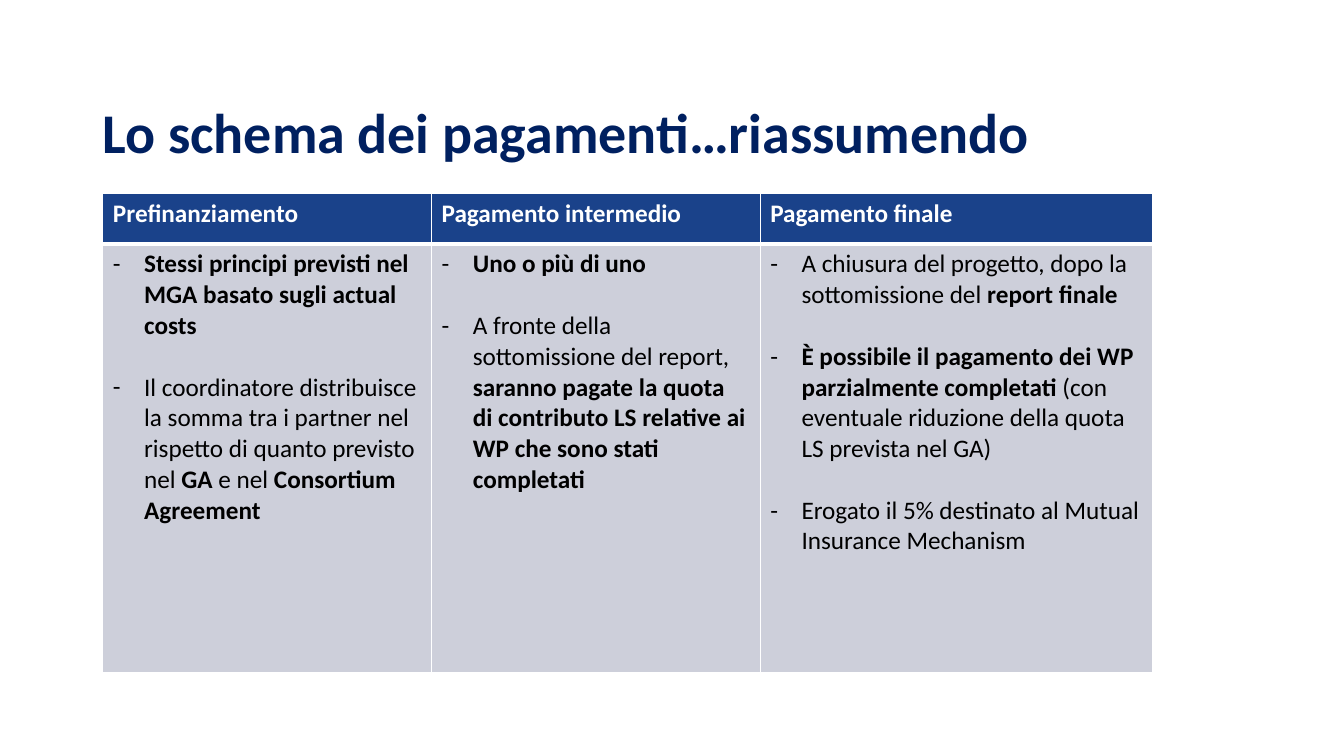
from dataclasses import dataclass

from lxml import etree
from pptx import Presentation
from pptx.dml.color import RGBColor
from pptx.enum.text import MSO_ANCHOR
from pptx.oxml.ns import qn
from pptx.util import Inches, Pt

MIDDLE = MSO_ANCHOR.MIDDLE


@dataclass(frozen=True)
class Theme:
    font: str = "Calibri"
    title: str = "002060"
    header: str = "1A428A"
    body: str = "CDCFDA"
    light: str = "FFFFFF"
    dark: str = "000000"
    title_size: int = 40
    text_size: int = 18
    item_gap: int = 22
    indent: float = 0.31
    thin: int = 1
    thick: int = 3


COLUMNS = [
    ("Prefinanziamento", 3.26, [
        [("Stessi principi previsti nel MGA basato sugli actual costs", True)],
        [("Il coordinatore distribuisce la somma tra i partner nel rispetto di quanto previsto nel ", False),
         ("GA", True), (" e nel ", False), ("Consortium Agreement", True)],
    ]),
    ("Pagamento intermedio", 3.26, [
        [("Uno o più di uno", True)],
        [("A fronte della sottomissione del report, ", False),
         ("saranno pagate la quota di contributo LS relative ai WP che sono stati completati", True)],
    ]),
    ("Pagamento finale", 3.89, [
        [("A chiusura del progetto, dopo la sottomissione del ", False), ("report finale", True)],
        [("È possibile il pagamento dei WP parzialmente completati ", True),
         ("(con eventuale riduzione della quota LS prevista nel GA)", False)],
        [("Erogato il 5% destinato al Mutual Insurance Mechanism", False)],
    ]),
]
ROW_HEIGHTS = [0.5, 4.25]


class SlideBuilder:
    def __init__(self, slide, theme):
        self.slide = slide
        self.theme = theme

    def style(self, paragraph, size, color, bold=None):
        font = paragraph.font
        font.name = self.theme.font
        font.size = Pt(size)
        font.color.rgb = RGBColor.from_string(color)
        font.bold = bold

    def title(self, text, left, top, width, height):
        shape = self.slide.shapes.add_textbox(Inches(left), Inches(top), Inches(width), Inches(height))
        frame = shape.text_frame
        frame.word_wrap = True
        frame.vertical_anchor = MIDDLE
        paragraph = frame.paragraphs[0]
        paragraph.text = text
        paragraph.line_spacing = 0.9
        self.style(paragraph, self.theme.title_size, self.theme.title, True)

    def bullet(self, paragraph):
        properties = paragraph._p.get_or_add_pPr()
        indent = Inches(self.theme.indent)
        properties.set("marL", str(indent))
        properties.set("indent", str(-indent))
        etree.SubElement(properties, qn("a:buFont"), typeface=self.theme.font)
        etree.SubElement(properties, qn("a:buChar"), char="-")

    def cell_style(self, cell, fill, top, bottom):
        properties = cell._tc.get_or_add_tcPr()
        thin = self.theme.thin
        for side, width in (("L", thin), ("R", thin), ("T", top), ("B", bottom)):
            line = etree.SubElement(properties, qn(f"a:ln{side}"), w=str(Pt(width)))
            solid = etree.SubElement(line, qn("a:solidFill"))
            etree.SubElement(solid, qn("a:srgbClr"), val=self.theme.light)
        cell.fill.solid()
        cell.fill.fore_color.rgb = RGBColor.from_string(fill)

    def header_cell(self, cell, text):
        theme = self.theme
        self.cell_style(cell, theme.header, theme.thin, theme.thick)
        paragraph = cell.text_frame.paragraphs[0]
        paragraph.text = text
        self.style(paragraph, theme.text_size, theme.light, True)

    def list_cell(self, cell, items):
        theme = self.theme
        self.cell_style(cell, theme.body, theme.thick, theme.thin)
        frame = cell.text_frame
        for index, parts in enumerate(items):
            paragraph = frame.add_paragraph() if index else frame.paragraphs[0]
            self.bullet(paragraph)
            if index:
                paragraph.space_before = Pt(theme.item_gap)
            uniform = len(parts) == 1
            self.style(paragraph, theme.text_size, theme.dark, parts[0][1] if uniform else None)
            for text, bold in parts:
                run = paragraph.add_run()
                run.text = text
                if not uniform:
                    run.font.bold = bold

    def payment_table(self, columns, heights, left, top):
        width = sum(column[1] for column in columns)
        shape = self.slide.shapes.add_table(
            len(heights), len(columns), Inches(left), Inches(top), Inches(width), Inches(sum(heights)))
        table = shape.table
        table.horz_banding = False
        for row, height in zip(table.rows, heights):
            row.height = Inches(height)
        for index, (heading, column_width, items) in enumerate(columns):
            table.columns[index].width = Inches(column_width)
            self.header_cell(table.cell(0, index), heading)
            self.list_cell(table.cell(1, index), items)


def main():
    presentation = Presentation()
    presentation.slide_width = Inches(13.33)
    presentation.slide_height = Inches(7.5)
    slide = presentation.slides.add_slide(presentation.slide_layouts[6])
    builder = SlideBuilder(slide, Theme())
    builder.title("Lo schema dei pagamenti…riassumendo", 0.92, 0.83, 11.5, 1.02)
    builder.payment_table(COLUMNS, ROW_HEIGHTS, 1.02, 1.92)
    presentation.save("out.pptx")


if __name__ == "__main__":
    main()
